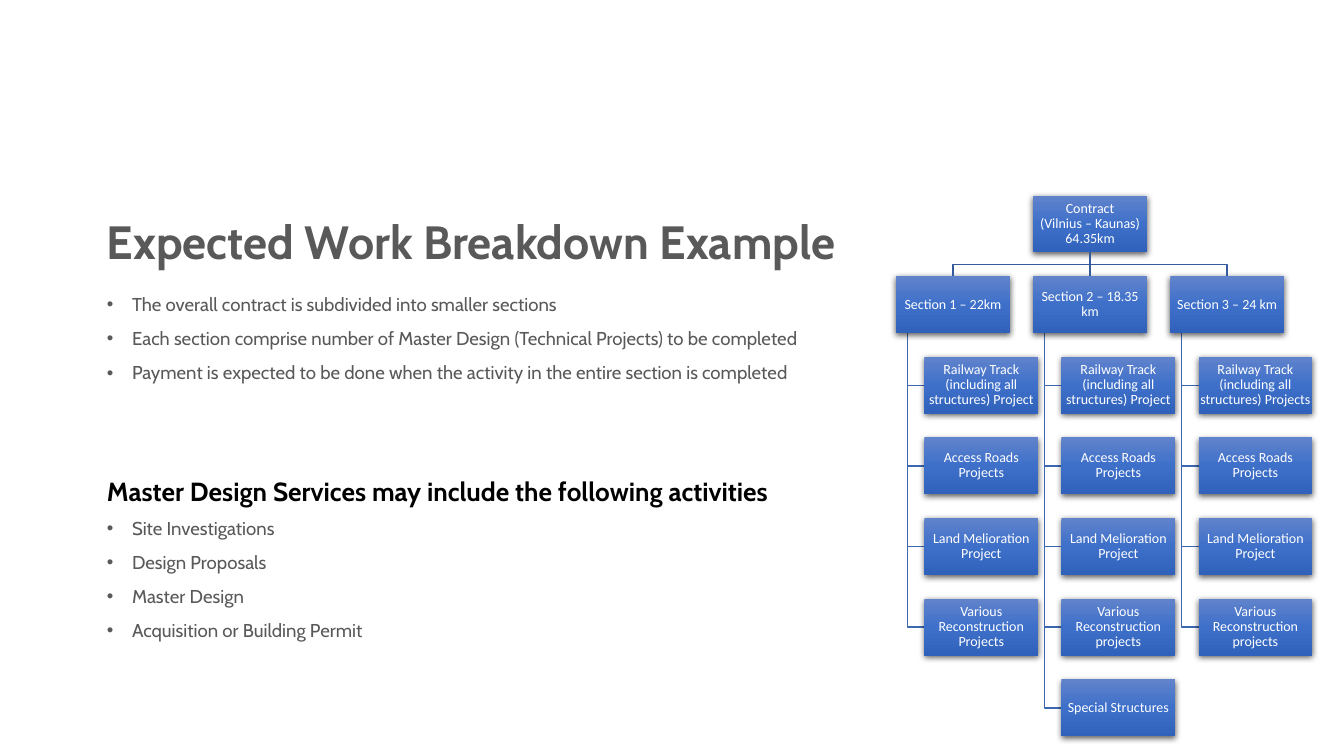
"""Build the work breakdown slide with its text column and contract hierarchy."""
from pptx import Presentation
from pptx import util as u
from pptx.dml import color
from pptx.enum import shapes, text
from pptx.oxml import parse_xml
from pptx.oxml import ns

TITLE = "Expected Work Breakdown Example"
OVERVIEW = [
    "The overall contract is subdivided into smaller sections",
    "Each section comprise number of Master Design (Technical Projects) to be completed",
    "Payment is expected to be done when the activity in the entire section is completed",
]
HEADING = "Master Design Services may include the following activities"
ACTIVITIES = [
    "Site Investigations",
    "Design Proposals",
    "Master Design",
    "Acquisition or Building Permit",
]
CONTRACT = ["Contract", "(Vilnius – Kaunas)", "64.35km"]
TRACK = "Railway Track (including all structures) Project"
ROADS = "Access Roads Projects"
LAND = "Land Melioration Project"
VARIOUS = "Various Reconstruction "
SECTIONS = [
    ("Section 1 – 22km", [TRACK, ROADS, LAND, VARIOUS + "Projects"]),
    ("Section 2 – 18.35 km",
     [TRACK, ROADS, LAND, VARIOUS + "projects", "Special Structures"]),
    ("Section 3 – 24 km", [TRACK + "s", ROADS, LAND, VARIOUS + "projects"]),
]

COLOURS = {
    "grey": "595959", "black": "000000", "white": "FFFFFF",
    "branch": "365B9D", "twig": "3E67B2",
    "box_top": "6183CB", "box_middle": "3E70CA", "box_bottom": "3062BB",
}
TEXT_FONT, CHART_FONT = "Cabin", "Calibri"

TEXT_LEFT, TEXT_WIDTH = 69.1, 546.5
CHART_LEFT, CHART_TOP = 640.1, 139.7
BOX_WIDTH, BOX_HEIGHT = 81.2, 40.6
COLUMN_STEP, ROW_STEP = 97.9, 57.6
TRUNK_INSET, CHILD_INSET = 8.1, 20.2


def colour(name):
    return color.RGBColor.from_string(COLOURS[name])


def add_span(para, words, font, size, shade, bold=False):
    span = para.add_run()
    span.text = words
    span.font.name = font
    span.font.size = u.Pt(size)
    span.font.bold = bold
    span.font.color.rgb = colour(shade)


def fill_placeholder(box, area, lines, size, shade, bold=False, bullets=False,
                     anchor=text.MSO_ANCHOR.TOP):
    box.left, box.top, box.width, box.height = (u.Pt(value) for value in area)
    frame = box.text_frame
    frame.word_wrap = True
    frame.auto_size = text.MSO_AUTO_SIZE.NONE
    frame.vertical_anchor = anchor
    for number, words in enumerate(lines):
        para = frame.add_paragraph() if number else frame.paragraphs[0]
        if bullets:
            props = para._p.get_or_add_pPr()
            props.set("marL", str(u.Pt(18)))
            props.set("indent", str(u.Pt(-18)))
            props.append(parse_xml(f'<a:buChar {ns.nsdecls("a")} char="•"/>'))
        para.alignment = text.PP_ALIGN.LEFT
        para.line_spacing = 0.9
        para.space_before = u.Pt(10 if number else 0)
        add_span(para, words, TEXT_FONT, size, shade, bold)


def add_box(page, left, top, lines):
    box = page.shapes.add_shape(
        shapes.MSO_SHAPE.RECTANGLE,
        u.Pt(left), u.Pt(top), u.Pt(BOX_WIDTH), u.Pt(BOX_HEIGHT))
    stops = "".join(
        f'<a:gs pos="{place}"><a:srgbClr val="{COLOURS[name]}"/></a:gs>'
        for place, name in ((0, "box_top"), (50000, "box_middle"), (100000, "box_bottom")))
    props = box._element.spPr
    props.append(parse_xml(
        f'<a:gradFill {ns.nsdecls("a")} rotWithShape="1"><a:gsLst>{stops}</a:gsLst>'
        '<a:lin ang="5400000" scaled="0"/></a:gradFill>'))
    box.line.fill.background()
    box.shadow.inherit = False
    props.find(ns.qn("a:effectLst")).append(parse_xml(
        f'<a:outerShdw {ns.nsdecls("a")} blurRad="{u.Pt(4.5)}" dist="{u.Pt(1.5)}" '
        f'dir="5400000" algn="ctr" rotWithShape="0"><a:srgbClr val="{COLOURS["black"]}">'
        '<a:alpha val="63000"/></a:srgbClr></a:outerShdw>'))
    frame = box.text_frame
    frame.word_wrap = True
    frame.vertical_anchor = text.MSO_ANCHOR.MIDDLE
    frame.margin_left = frame.margin_right = u.Pt(0.7)
    frame.margin_top = frame.margin_bottom = u.Pt(0.7)
    para = frame.paragraphs[0]
    para.alignment = text.PP_ALIGN.CENTER
    para.line_spacing = 0.9
    for number, words in enumerate(lines):
        if number:
            para.add_line_break()
        add_span(para, words, CHART_FONT, 10, "white")
    return box


def add_elbow(page, points, shade):
    corners = [(u.Pt(x), u.Pt(y)) for x, y in points]
    builder = page.shapes.build_freeform(*corners[0])
    builder.add_line_segments(corners[1:], close=False)
    elbow = builder.convert_to_shape()
    elbow.fill.background()
    elbow.line.color.rgb = colour(shade)
    elbow.line.width = u.Pt(1)
    elbow.shadow.inherit = False


def add_hierarchy(page):
    contract_left = CHART_LEFT + COLUMN_STEP
    contract_middle = contract_left + BOX_WIDTH / 2
    contract_bottom = CHART_TOP + BOX_HEIGHT
    section_top = CHART_TOP + ROW_STEP
    section_bottom = section_top + BOX_HEIGHT
    bus = (contract_bottom + section_top) / 2
    contract = add_box(page, contract_left, CHART_TOP, CONTRACT)
    for column, (name, projects) in enumerate(SECTIONS):
        left = CHART_LEFT + column * COLUMN_STEP
        middle = left + BOX_WIDTH / 2
        trunk, child = left + TRUNK_INSET, left + CHILD_INSET
        tops = [section_top + row * ROW_STEP for row in range(1, len(projects) + 1)]
        for top in tops:
            level = top + BOX_HEIGHT / 2
            add_elbow(page, [(trunk, section_bottom), (trunk, level), (child, level)], "twig")
        section = add_box(page, left, section_top, [name])
        if column == 1:
            link = page.shapes.add_connector(shapes.MSO_CONNECTOR.STRAIGHT, 0, 0, 0, 0)
            link.begin_connect(contract, 2)
            link.end_connect(section, 0)
            link.line.color.rgb = colour("branch")
            link.line.width = u.Pt(1)
            link._element.spPr.append(parse_xml(f'<a:effectLst {ns.nsdecls("a")}/>'))
        else:
            add_elbow(page, [(contract_middle, contract_bottom), (contract_middle, bus),
                             (middle, bus), (middle, section_top)], "branch")
        for top, project in zip(tops, projects):
            add_box(page, child, top, [project])


def main():
    deck = Presentation()
    deck.slide_width, deck.slide_height = u.Pt(960), u.Pt(540)
    page = deck.slides.add_slide(deck.slide_layouts.get_by_name("Comparison"))
    holders = {box.placeholder_format.idx: box for box in page.placeholders}
    fill_placeholder(holders[0], (TEXT_LEFT, 153.4, 614.2, 42.5), [TITLE], 33.3, "grey",
                     bold=True, anchor=text.MSO_ANCHOR.MIDDLE)
    fill_placeholder(holders[2], (TEXT_LEFT, 207.4, TEXT_WIDTH, 91.4), OVERVIEW, 13.3,
                     "grey", bullets=True)
    fill_placeholder(holders[1], (TEXT_LEFT, 338.4, TEXT_WIDTH, 34.6), [HEADING], 18.7,
                     "black", bold=True)
    fill_placeholder(holders[4], (TEXT_LEFT, 367.2, TEXT_WIDTH, 98.6), ACTIVITIES, 13.3,
                     "grey", bullets=True)
    spare = holders[3]._element
    spare.getparent().remove(spare)
    add_hierarchy(page)
    deck.save("out.pptx")


if __name__ == "__main__":
    main()
